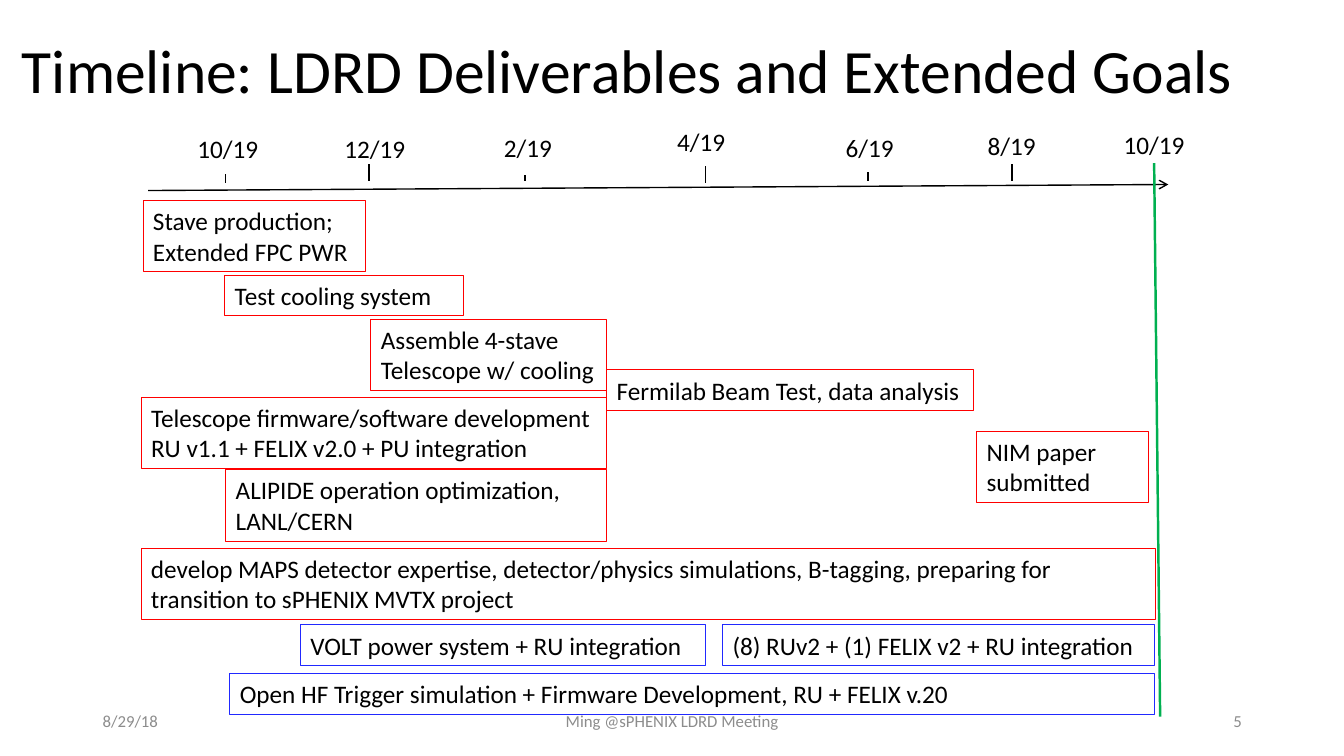
from lxml.etree import SubElement
from pptx import Presentation
from pptx.dml.color import RGBColor
from pptx.enum.shapes import MSO_CONNECTOR as Conn, MSO_SHAPE as Shape
from pptx.enum.text import MSO_ANCHOR as Anchor, PP_ALIGN as Align
from pptx.oxml.ns import qn
from pptx.util import Pt

BLACK = RGBColor(0x00, 0x00, 0x00)
RED = RGBColor(0xFF, 0x00, 0x00)
BLUE = RGBColor(0x21, 0x29, 0xFF)
GREEN = RGBColor(0x00, 0xB0, 0x50)
GRAY = RGBColor(0x8C, 0x8C, 0x8C)

ONE, TWO = 29.1, 51

TICKS = [
    ("10/19", 161.3, 133.9, 91.4, 124.6, 131),
    ("12/19", 263.5, 239, 91.4, 117.4, 129.6),
    ("2/19", 375.1, 352.8, 90.7, 125.3, 129.6),
    ("4/19", 504, 476.6, 86.4, 118.8, 131),
    ("6/19", 619.9, 596.9, 90.7, 123.1, 129.6),
    ("8/19", 722.9, 698.4, 89.3, 117.4, 129.6),
]

TASKS = [
    (102.2, 143.3, 159.1, TWO, RED, ["Stave production;", "Extended FPC PWR"]),
    (265, 228.2, 168.5, TWO, RED, ["Assemble 4-stave", "Telescope w/ cooling"]),
    (433.4, 264.2, 262.1, ONE, RED, ["Fermilab Beam Test, data analysis"]),
    (161.3, 335.5, 272.2, TWO, RED,
     ["ALIPIDE operation optimization, LANL/CERN"]),
    (697.7, 308.2, 122.4, TWO, RED, ["NIM paper", "submitted"]),
    (100.8, 283.7, 332.6, TWO, RED,
     ["Telescope firmware/software development",
      "RU v1.1 + FELIX v2.0 + PU integration"]),
    (516.2, 446.4, 308.2, ONE, BLUE,
     ["(8) RUv2 + (1) FELIX v2 + RU integration"]),
    (214.6, 446.4, 289.4, ONE, BLUE, ["VOLT power system + RU integration"]),
    (100.8, 391.7, 724.3, TWO, RED,
     ["develop MAPS detector expertise, detector/physics simulations, "
      "B-tagging, preparing for transition to sPHENIX MVTX project"]),
    (160.6, 196.6, 170.6, ONE, RED, ["Test cooling system"]),
    (164.2, 481, 660.2, ONE, BLUE,
     ["Open HF Trigger simulation + Firmware Development, RU + FELIX v.20"]),
]

FOOT = [
    (66.2, 216, "8/29/18", Align.LEFT),
    (318.2, 324, "Ming @sPHENIX LDRD Meeting", Align.CENTER),
    (678.2, 216, "5", Align.RIGHT),
]


class Board:
    """Draws styled text, boxes and lines on one slide."""

    def __init__(self, slide, font="Calibri", size=18):
        self.items = slide.shapes
        self.font = font
        self.size = size

    def fill(self, frame, lines, size=None, color=BLACK, align=Align.LEFT,
             space=None):
        for i, line in enumerate(lines):
            para = frame.add_paragraph() if i else frame.paragraphs[0]
            para.alignment = align
            para.line_spacing = space
            run = para.add_run()
            run.text = line
            run.font.name = self.font
            run.font.size = Pt(size or self.size)
            run.font.color.rgb = color

    def text(self, x, y, wide, high, words, anchor=Anchor.TOP, **style):
        box = self.items.add_textbox(Pt(x), Pt(y), Pt(wide), Pt(high))
        frame = box.text_frame
        frame.word_wrap = True
        frame.vertical_anchor = anchor
        self.fill(frame, [words], **style)

    def date(self, x, y, words):
        self.text(x, y, 4 * len(words) + 38, ONE, words)

    def task(self, x, y, wide, high, color, lines):
        box = self.items.add_shape(
            Shape.RECTANGLE, Pt(x), Pt(y), Pt(wide), Pt(high))
        box.shadow.inherit = False
        box.fill.background()
        box.line.color.rgb = color
        box.line.width = Pt(0.75)
        frame = box.text_frame
        frame.word_wrap = True
        frame.vertical_anchor = Anchor.TOP
        self.fill(frame, lines)

    def line(self, x1, y1, x2, y2, color=BLACK, width=1, arrow=False):
        link = self.items.add_connector(
            Conn.STRAIGHT, Pt(x1), Pt(y1), Pt(x2), Pt(y2))
        link.line.color.rgb = color
        link.line.width = Pt(width)
        props = link._element.spPr
        if arrow:
            SubElement(props.find(qn("a:ln")), qn("a:tailEnd"), type="arrow")
        SubElement(props, qn("a:effectLst"))


def main():
    deck = Presentation()
    deck.slide_width, deck.slide_height = Pt(960), Pt(540)
    board = Board(deck.slides.add_slide(deck.slide_layouts[6]))

    board.text(8.6, 0, 920.2, 104.4,
               "Timeline: LDRD Deliverables and Extended Goals",
               anchor=Anchor.MIDDLE, size=44, space=0.9)
    board.line(105.8, 136.1, 834.5, 131.8, arrow=True)
    for label, x, left, top, start, end in TICKS:
        board.line(x, start, x, end)
        board.date(left, top, label)
    board.date(795.6, 88.6, "10/19")
    for task in TASKS:
        board.task(*task)
    board.line(824.4, 116.6, 828.7, 511.9, GREEN, 1.75)
    for x, wide, words, align in FOOT:
        board.text(x, 500.4, wide, 28.8, words, anchor=Anchor.MIDDLE,
                   size=12, color=GRAY, align=align)
    deck.save("out.pptx")


if __name__ == "__main__":
    main()
